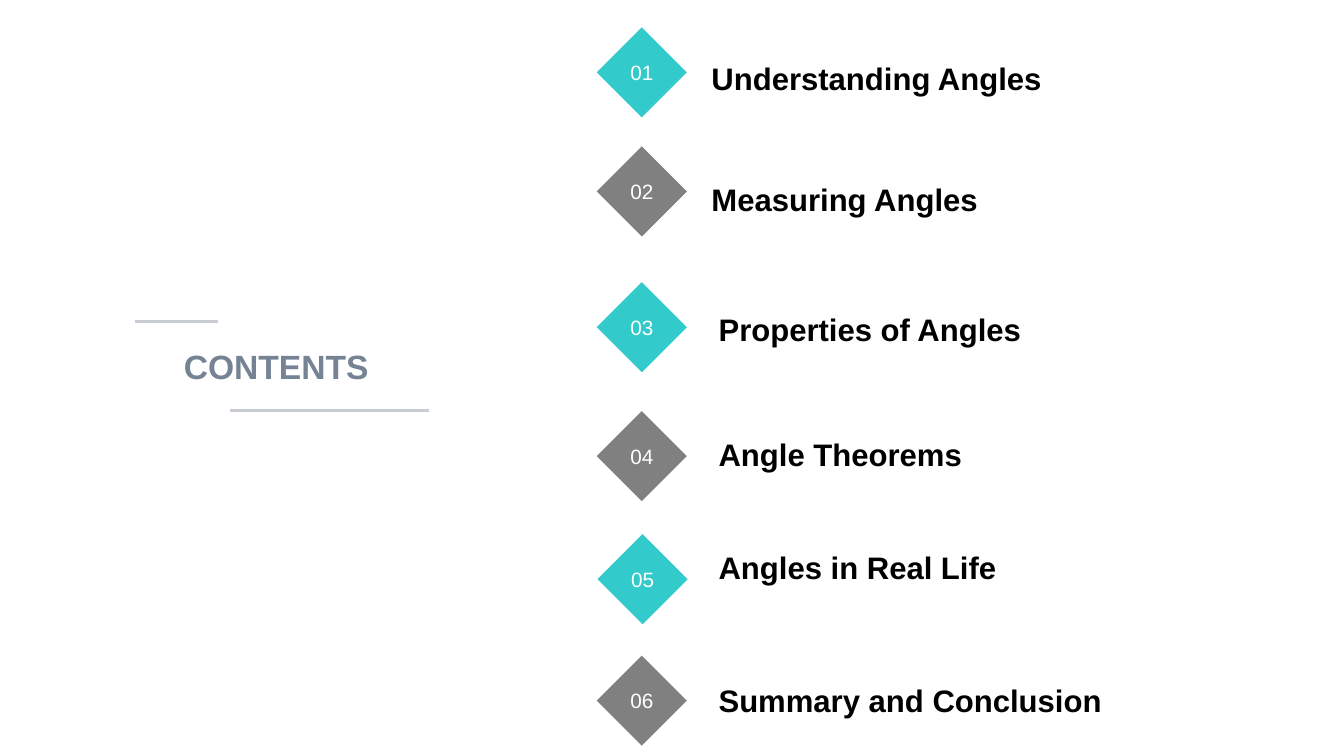
from pptx import Presentation
from pptx.dml.color import RGBColor
from pptx.enum.shapes import MSO_CONNECTOR, MSO_SHAPE
from pptx.enum.text import MSO_ANCHOR, MSO_AUTO_SIZE, PP_ALIGN
from pptx.util import Cm, Pt
from lxml import etree

DIAMOND = MSO_SHAPE.DIAMOND
STRAIGHT = MSO_CONNECTOR.STRAIGHT
MIDDLE, BOTTOM = MSO_ANCHOR.MIDDLE, MSO_ANCHOR.BOTTOM
LEFT, CENTER = PP_ALIGN.LEFT, PP_ALIGN.CENTER
NO_AUTOFIT = MSO_AUTO_SIZE.NONE
A_NS = "http://schemas.openxmlformats.org/drawingml/2006/main"

TEAL, GRAY, SLATE, PALE = "32CACB", "808080", "768394", "C8CDD4"


def rgb(value):
    return RGBColor.from_string(value)


def write(s, text, size, color, bold, align, anchor, inset=(0, 0)):
    """Fill a shape with one line of text; inset is (horizontal, vertical) in cm."""
    tf = s.text_frame
    frame = {"word_wrap": True, "auto_size": NO_AUTOFIT, "vertical_anchor": anchor,
             "margin_left": Cm(inset[0]), "margin_right": Cm(inset[0]),
             "margin_top": Cm(inset[1]), "margin_bottom": Cm(inset[1])}
    for name, value in frame.items():
        setattr(tf, name, value)
    p = tf.paragraphs[0]
    p.alignment = align
    r = p.add_run()
    r.text = text
    for name, value in {"name": "Arial", "size": Pt(size), "bold": bold}.items():
        setattr(r.font, name, value)
    r.font.color.rgb = rgb(color)


prs = Presentation()
prs.slide_width, prs.slide_height = Cm(33.87), Cm(19.05)
slide = prs.slides.add_slide(prs.slide_layouts[5])

# Heading between two rules
title = slide.shapes.title
title.left, title.top, title.width, title.height = Cm(4.19), Cm(8.48), Cm(5.54), Cm(1.47)
write(title, "CONTENTS", 24, SLATE, True, CENTER, MIDDLE)

for x1, x2, y in [(5.49, 3.39, 8.1), (5.79, 10.8, 10.34)]:
    rule = slide.shapes.add_connector(STRAIGHT, Cm(x1), Cm(y), Cm(x2), Cm(y))
    rule.line.color.rgb = rgb(PALE)
    rule.line.width = Pt(1.75)
    etree.SubElement(rule._element.spPr, f"{{{A_NS}}}effectLst")

# Chapters: name, diamond left and top, label left and top
chapters = [
    ("Understanding Angles", 15.04, 0.69, 17.75, 1.5),
    ("Measuring Angles", 15.04, 3.69, 17.75, 4.55),
    ("Properties of Angles", 15.04, 7.11, 17.93, 7.82),
    ("Angle Theorems", 15.04, 10.36, 17.93, 10.97),
    ("Angles in Real Life", 15.06, 13.46, 17.93, 13.82),
    ("Summary and Conclusion", 15.04, 16.52, 17.93, 17.15),
]
for number, (name, x, y, label_x, label_y) in enumerate(chapters, 1):
    s = slide.shapes.add_shape(DIAMOND, Cm(x), Cm(y), Cm(2.27), Cm(2.27))
    s.shadow.inherit = False
    s.fill.solid()
    s.fill.fore_color.rgb = rgb(TEAL if number % 2 else GRAY)
    s.line.fill.background()
    write(s, f"{number:02d}", 14.8, "FFFFFF", False, CENTER, MIDDLE)

    label = slide.shapes.add_textbox(Cm(label_x), Cm(label_y), Cm(14.25), Cm(1.02))
    write(label, name, 22.2, "000000", True, LEFT, BOTTOM, (0.18, 0.07))

prs.save("out.pptx")
